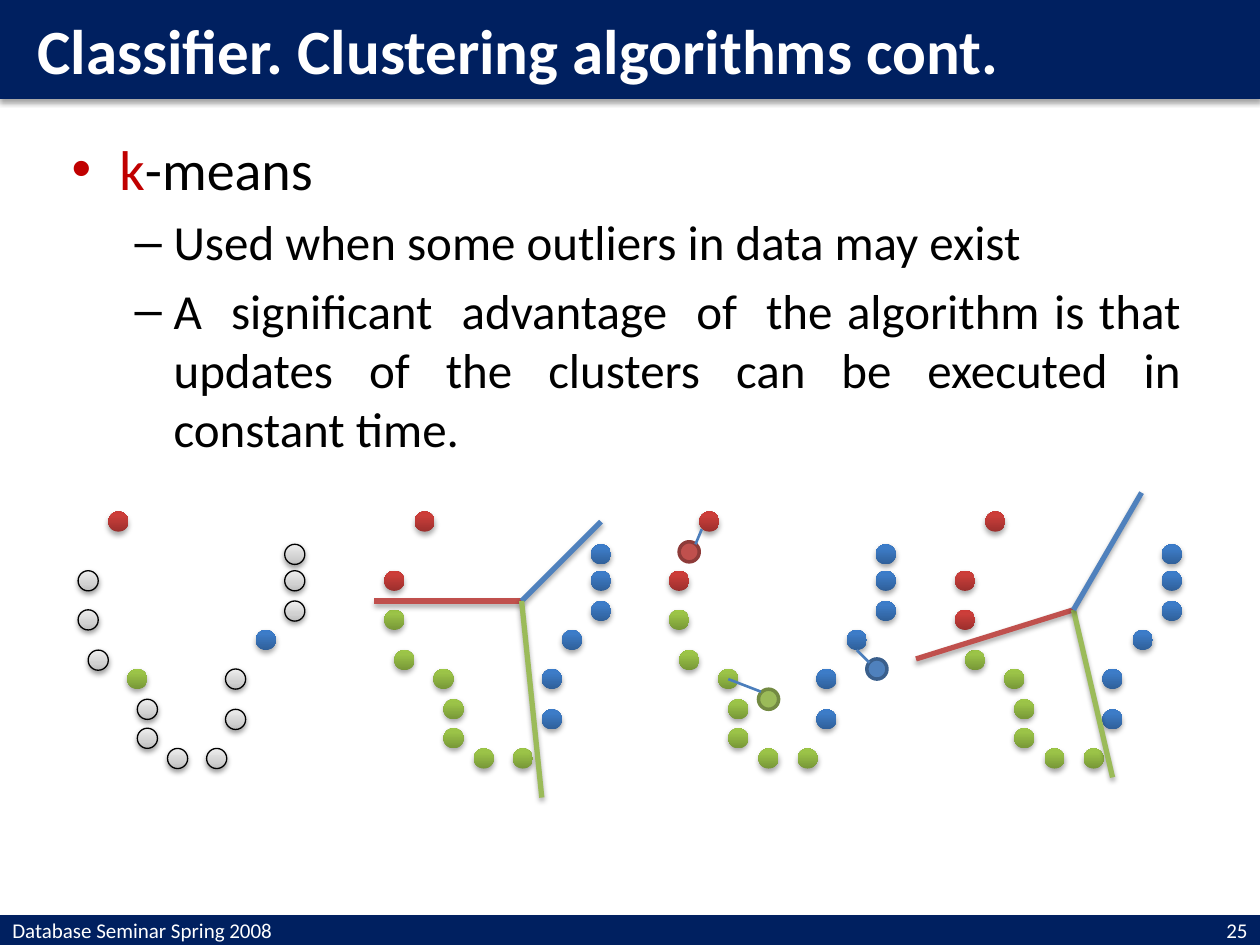
from dataclasses import dataclass, field

from lxml import etree
from pptx import Presentation
from pptx import util as u
from pptx.dml.color import RGBColor
from pptx.enum import shapes, text
from pptx.oxml.ns import qn


@dataclass
class Theme:
    font: str = "Calibri"
    title: int = 36
    topic: int = 32
    detail: int = 28
    footer: int = 12
    navy: str = "002060"
    white: str = "FFFFFF"
    black: str = "000000"
    accent: str = "C00000"
    link: str = "4B7EBC"
    # One letter per cluster; W is a point without a cluster yet
    gradients: dict = field(default_factory=lambda: {
        "W": ((0, "BDBDBD"), (35, "D1D1D1"), (100, "EEEEEE")),
        "R": ((0, "9C2F2D"), (80, "CB3E3A"), (100, "CE3B37")),
        "G": ((0, "779737"), (80, "9BC348"), (100, "9DC746")),
        "B": ((0, "2F5F99"), (80, "3D7CC7"), (100, "3A7CCB"))})
    solids: dict = field(default_factory=lambda: {
        "R": ("C0504D", "8E3B39"), "G": ("9BBB59", "738A42"),
        "B": ("4F81BD", "3A5F8C")})


class SlideBuilder:
    DOT = 0.16

    def __init__(self, slide, theme):
        self.slide, self.theme = slide, theme
        self.canvas = slide.shapes

    def start_group(self):
        self.canvas = self.slide.shapes.add_group_shape().shapes

    def child(self, parent, tag, **attributes):
        return etree.SubElement(parent, qn(tag), {k: str(v) for k, v in attributes.items()})

    def effects(self, item, shadow=True, alpha=35, distance=1.8):
        effect_list = self.child(item._element.spPr, "a:effectLst")
        if shadow:
            outer = self.child(effect_list, "a:outerShdw", blurRad=u.Pt(3.1), dist=u.Pt(distance),
                               dir=90 * 60000, rotWithShape=0)
            color = self.child(outer, "a:srgbClr", val=self.theme.black)
            self.child(color, "a:alpha", val=alpha * 1000)

    def outline(self, item, color, width):
        item.line.color.rgb = RGBColor.from_string(color)
        item.line.width = u.Pt(width)

    def run(self, paragraph, words, size, color, bold=False):
        run = paragraph.add_run()
        run.text = words
        run.font.name, run.font.size, run.font.bold = self.theme.font, u.Pt(size), bold
        run.font.color.rgb = RGBColor.from_string(color)

    def label(self, item, words, size, bold=False, align=text.PP_ALIGN.LEFT, margin=0.0):
        frame = item.text_frame
        frame.word_wrap = True
        frame.vertical_anchor = text.MSO_ANCHOR.MIDDLE
        frame.margin_top = frame.margin_bottom = 0
        paragraph = frame.paragraphs[0]
        paragraph.alignment = align
        paragraph._p.get_or_add_pPr().set("marL", str(u.Inches(margin)))
        self.run(paragraph, words, size, self.theme.white, bold)

    def textbox(self, left, top, width, height):
        return self.slide.shapes.add_textbox(*map(u.Inches, (left, top, width, height)))

    def bar(self, top, height, words, size, **label_style):
        bar = self.canvas.add_shape(shapes.MSO_SHAPE.RECTANGLE,
                                    *map(u.Inches, (0, top, 10, height)))
        bar.fill.solid()
        bar.fill.fore_color.rgb = RGBColor.from_string(self.theme.navy)
        self.outline(bar, self.theme.navy, 0.75)
        self.effects(bar)
        self.label(bar, words, size, **label_style)

    def bullet(self, paragraph, mark, size, margin, indent, level, runs):
        paragraph.alignment = text.PP_ALIGN.JUSTIFY
        paragraph.level = level
        properties = paragraph._p.get_or_add_pPr()
        properties.set("marL", str(u.Inches(margin)))
        properties.set("indent", str(u.Inches(indent)))
        self.child(properties, "a:buFont", typeface="Arial")
        self.child(properties, "a:buChar", char=mark)
        if level:
            paragraph.space_before = u.Pt(size * 0.2)
        for words, color in runs:
            self.run(paragraph, words, size, color)

    def dot(self, left, top):
        return self.canvas.add_shape(shapes.MSO_SHAPE.OVAL,
                                     *map(u.Inches, (left, top, self.DOT, self.DOT)))

    def point(self, left, top, cluster):
        point = self.dot(left, top)
        point.fill.gradient()
        gradient = point._element.spPr.find(qn("a:gradFill"))
        for part in list(gradient):
            gradient.remove(part)
        stops = self.child(gradient, "a:gsLst")
        for position, color in self.theme.gradients[cluster]:
            stop = self.child(stops, "a:gs", pos=position * 1000)
            self.child(stop, "a:srgbClr", val=color)
        self.child(gradient, "a:lin", ang=270 * 60000, scaled=0)
        if cluster == "W":
            self.outline(point, self.theme.black, 0.75)
            self.effects(point, alpha=38, distance=1.6)
        else:
            point.line.fill.background()
            self.effects(point)

    def centroid(self, left, top, cluster):
        fill, edge = self.theme.solids[cluster]
        centroid = self.dot(left, top)
        centroid.fill.solid()
        centroid.fill.fore_color.rgb = RGBColor.from_string(fill)
        self.outline(centroid, edge, 2)
        self.effects(centroid, shadow=False)

    def line(self, start, end, color, width, shadow):
        line = self.canvas.add_connector(shapes.MSO_CONNECTOR.STRAIGHT,
                                         *map(u.Inches, (*start, *end)))
        self.outline(line, color, width)
        self.effects(line, shadow)


# Data points as (offset from panel left, top)
POINTS = [(0, 4.53), (0, 4.84), (0.24, 4.06), (0.08, 5.16), (1.64, 4.32),
          (0.71, 5.94), (1.41, 5), (1.02, 5.94), (0.47, 5.55), (0.39, 5.31),
          (0.47, 5.78), (1.17, 5.63), (1.17, 5.31), (1.64, 4.53), (1.64, 4.77)]
INNER_COLUMN = 1.17

# Panels: left, cluster of each point, shift of the inner right column,
# centroids, links to centroids, hub and ends of the cluster borders
PANELS = [
    (0.62, "WWRWWWBWWGWWWWW", 0, [], [], None, {}),
    (3.05, "RGRGBGBGGGGBBBB", 0.08, [], [], (4.14, 4.77),
     {"R": (2.97, 4.77), "B": (4.77, 4.14), "G": (4.3, 6.33)}),
    (5.31, "RGRGBGBGGGGBBBB", 0,
     [(6.02, 5.47, "G"), (6.88, 5.23, "B"), (5.39, 4.3, "R")],
     [((5.78, 5.39), (6.04, 5.49)), ((5.57, 4.2), (5.52, 4.32)), ((6.8, 5.16), (6.9, 5.26))],
     None, {}),
    (7.58, "RRRGBGBGGGGBBBB", 0, [], [], (8.52, 4.84),
     {"R": (7.27, 5.23), "G": (8.83, 6.17), "B": (9.06, 3.91)}),
]


def main():
    deck = Presentation()
    deck.slide_width, deck.slide_height = u.Inches(10), u.Inches(7.5)
    theme = Theme()
    builder = SlideBuilder(deck.slides.add_slide(deck.slide_layouts[6]), theme)

    # Footer and title bars
    builder.bar(7.27, 0.23, "Database Seminar Spring 2008", theme.footer)
    page_number = builder.textbox(7.67, 7.27, 2.33, 0.23)
    builder.label(page_number, "25", theme.footer, align=text.PP_ALIGN.RIGHT)
    builder.bar(0, 0.78, "Classifier. Clustering algorithms cont.", theme.title,
                bold=True, margin=0.2)

    # Bullet text
    body = builder.textbox(0.47, 1.02, 9, 2.5).text_frame
    body.word_wrap = True
    builder.bullet(body.paragraphs[0], "•", theme.topic, 0.38, -0.38, 0,
                   [("k", theme.accent), ("-means", theme.black)])
    for detail in ("Used when some outliers in data may exist",
                   "A  significant  advantage  of  the algorithm is that updates of the "
                   "clusters can be executed in constant time."):
        builder.bullet(body.add_paragraph(), "–", theme.detail, 0.81, -0.31, 1,
                       [(detail, theme.black)])

    # Steps of the clustering
    for left, clusters, shift, centroids, links, hub, borders in PANELS:
        builder.start_group()
        for (offset, top), cluster in zip(POINTS, clusters):
            extra = shift if offset == INNER_COLUMN else 0
            builder.point(left + offset + extra, top, cluster)
        for centroid in centroids:
            builder.centroid(*centroid)
        for start, end in links:
            builder.line(start, end, theme.link, 1.5, shadow=False)
        for cluster, end in borders.items():
            builder.line(hub, end, theme.solids[cluster][0], 3, shadow=True)

    deck.save("out.pptx")


if __name__ == "__main__":
    main()
